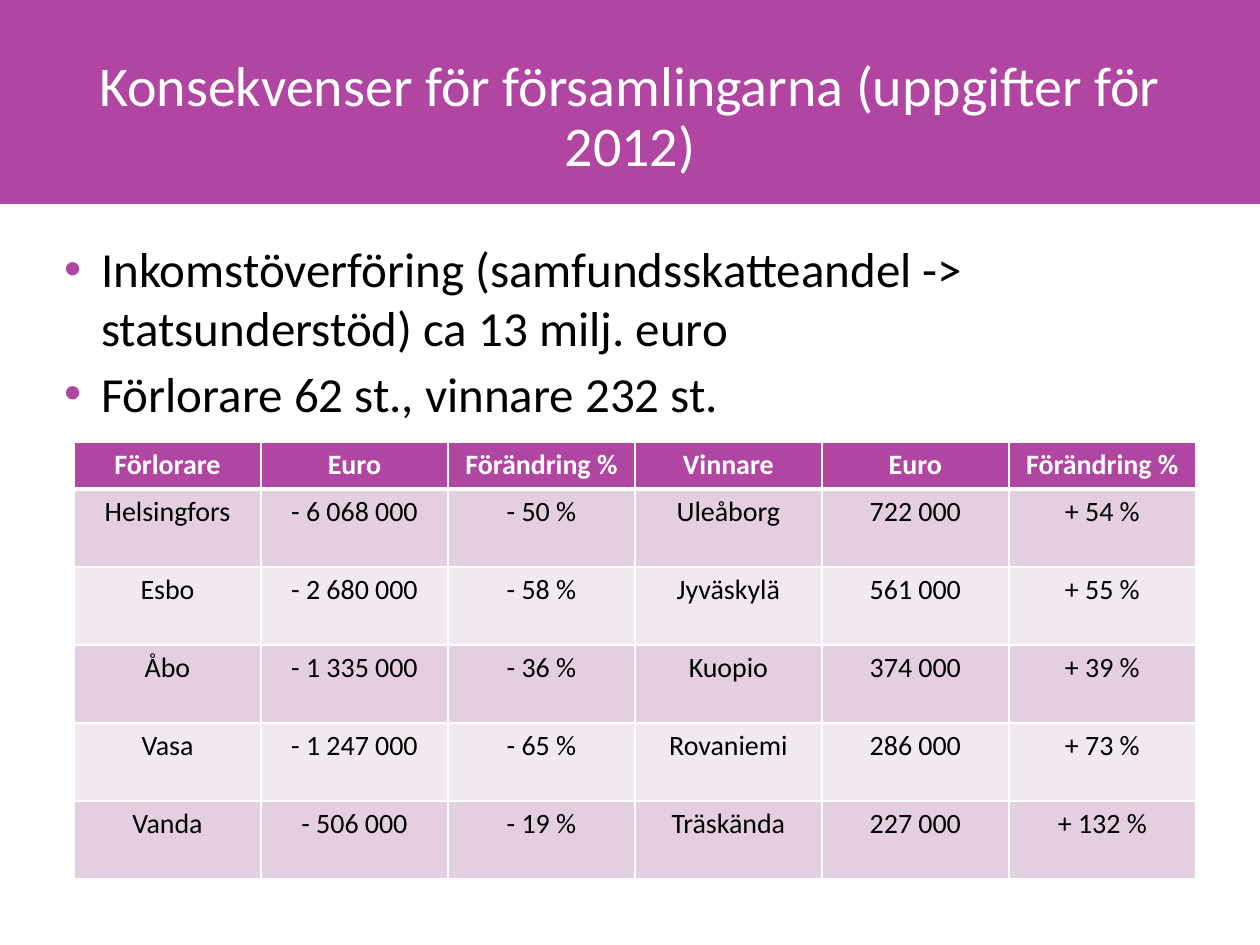
from lxml import etree
from pptx import Presentation, util as u
from pptx.dml.color import RGBColor
from pptx.enum import shapes, text
from pptx.oxml import ns

SCALE = 914400 / 126
FONT = "Calibri"
HEX = {"plum": "B146A2", "dark": "E4CFE0", "light": "F2E9F0",
       "white": "FFFFFF", "black": "000000"}
TITLE = "Konsekvenser för församlingarna (uppgifter för 2012)"
POINTS = [
    "Inkomstöverföring (samfundsskatteandel -> statsunderstöd) ca 13 milj. euro",
    "Förlorare 62 st., vinnare 232 st.",
]
ROWS = [
    ["Förlorare", "Euro", "Förändring %", "Vinnare", "Euro", "Förändring %"],
    ["Helsingfors", "- 6 068 000", "- 50 %", "Uleåborg", "722 000", "+ 54 %"],
    ["Esbo", "- 2 680 000", "- 58 %", "Jyväskylä", "561 000", "+ 55 %"],
    ["Åbo", "- 1 335 000", "- 36 %", "Kuopio", "374 000", "+ 39 %"],
    ["Vasa", "- 1 247 000", "- 65 %", "Rovaniemi", "286 000", "+ 73 %"],
    ["Vanda", "- 506 000", "- 19 %", "Träskända", "227 000", "+ 132 %"],
]


def px(num):
    return u.Emu(round(num * SCALE))


def rgb(name):
    return RGBColor.from_string(HEX[name])


def node(parent, tag, **attrs):
    return etree.SubElement(parent, ns.qn(tag), attrs)


class Deck:
    """Holds the style and the current slide."""

    def __init__(self, wide, high):
        self.prs = Presentation()
        self.prs.slide_width, self.prs.slide_height = px(wide), px(high)
        self.slide = self.prs.slides.add_slide(self.prs.slide_layouts[5])

    def run(self, para, words, size, color, bold=False):
        run = para.add_run()
        run.text = words
        font = run.font
        font.name, font.size, font.bold = FONT, u.Pt(size), bold
        font.color.rgb = rgb(color)

    def frame(self, shape, side, edge):
        """Set wrapping and insets, and return the text frame."""
        frame = shape.text_frame
        frame.word_wrap = True
        frame.auto_size = text.MSO_AUTO_SIZE.NONE
        frame.margin_left = frame.margin_right = px(side)
        frame.margin_top = frame.margin_bottom = px(edge)
        return frame

    def band(self, box, color):
        """Put a filled strip behind the title."""
        band = self.slide.shapes.add_shape(
            shapes.MSO_SHAPE.RECTANGLE, *map(px, box))
        band.shadow.inherit = False
        band.fill.solid()
        band.fill.fore_color.rgb = rgb(color)
        band.line.fill.background()
        self.slide.shapes.title.element.addprevious(band.element)

    def title(self, box, words):
        title = self.slide.shapes.title
        title.left, title.top, title.width, title.height = map(px, box)
        frame = self.frame(title, 39, 5)
        frame.vertical_anchor = text.MSO_ANCHOR.BOTTOM
        para = frame.paragraphs[0]
        para.alignment = text.PP_ALIGN.CENTER
        para.line_spacing = 0.9
        self.run(para, words, 32, "white")

    def bullets(self, box, items):
        shape = self.slide.shapes.add_textbox(*map(px, box))
        frame = self.frame(shape, 10, 5)
        for i, item in enumerate(items):
            para = frame.add_paragraph() if i else frame.paragraphs[0]
            props = para._p.get_or_add_pPr()
            props.set("marL", str(px(37)))
            props.set("indent", str(px(-37)))
            node(node(props, "a:buClr"), "a:srgbClr", val=HEX["plum"])
            node(props, "a:buFont", typeface="Arial")
            node(props, "a:buChar", char="•")
            para.space_after = u.Pt(4)
            self.run(para, item, 28, "black")

    def borders(self, cell, top, bottom):
        """Draw white cell edges; top and bottom widths are in points."""
        props = cell._tc.get_or_add_tcPr()
        for side, width in zip("LRTB", (1, 1, top, bottom)):
            line = node(props, f"a:ln{side}", w=str(u.Pt(width)))
            node(node(line, "a:solidFill"), "a:srgbClr", val=HEX["white"])

    def table(self, left, top, col, head, row, rows):
        count, cols = len(rows), len(rows[0])
        grid = self.slide.shapes.add_table(
            count, cols, px(left), px(top),
            px(col * cols), px(head + row * (count - 1))).table
        for column in grid.columns:
            column.width = px(col)
        for r, words in enumerate(rows):
            grid.rows[r].height = px(row if r else head)
            fill = ("dark" if r % 2 else "light") if r else "plum"
            for c, word in enumerate(words):
                cell = grid.cell(r, c)
                self.borders(cell, 3 if r == 1 else 1, 1 if r else 3)
                cell.fill.solid()
                cell.fill.fore_color.rgb = rgb(fill)
                para = cell.text_frame.paragraphs[0]
                para.alignment = text.PP_ALIGN.CENTER
                self.run(para, word, 16, "black" if r else "white", not r)


def main():
    deck = Deck(1260, 945)
    deck.band((0, 0, 1260, 204), "plum")
    deck.title((54, 45, 1152, 139), TITLE)
    deck.bullets((54, 234, 1152, 605), POINTS)
    deck.table(74, 442, 187, 46, 78, ROWS)
    deck.prs.save("out.pptx")


if __name__ == "__main__":
    main()
